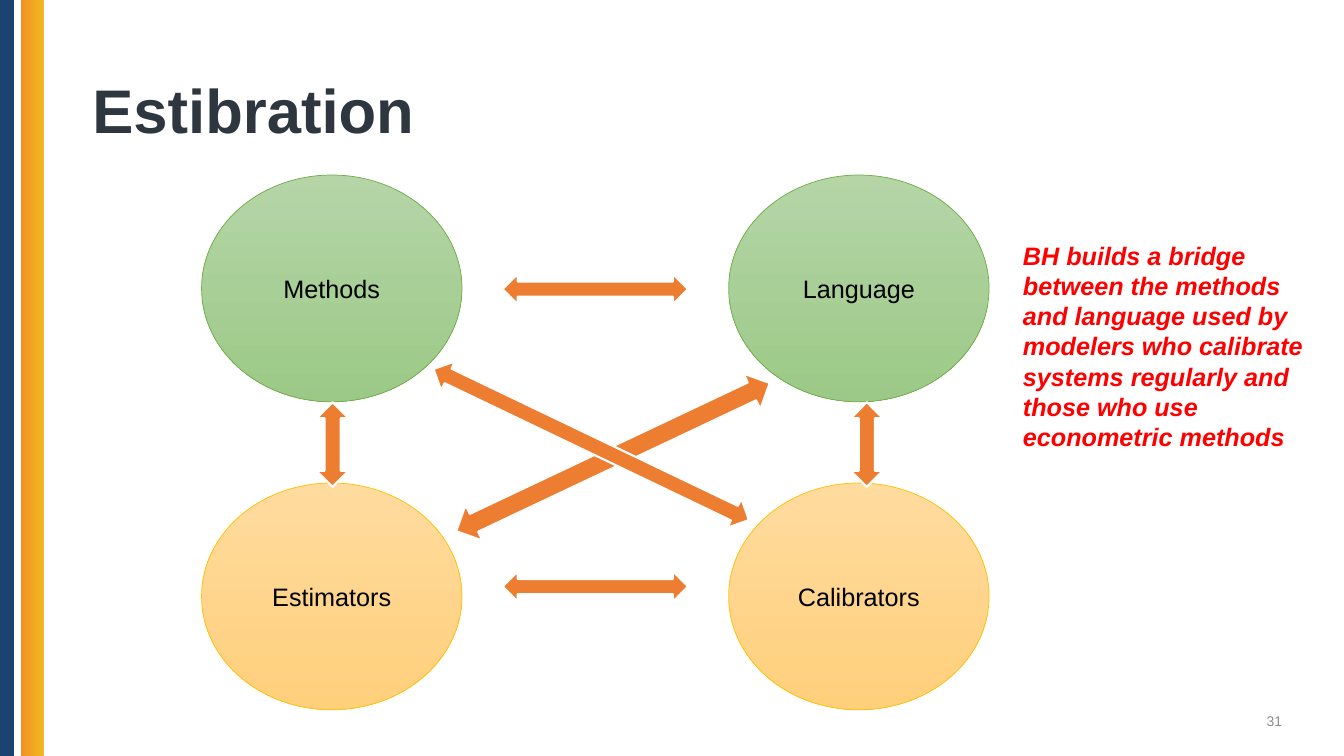
from pptx import Presentation
from pptx.dml.color import RGBColor
from pptx.enum.shapes import MSO_SHAPE
from pptx.enum.text import MSO_ANCHOR, PP_ALIGN
from pptx.util import Pt

HUES = {
    "navy": "1B4273", "amber": "F38F22", "gold": "F1BA20",
    "ink": "2E3640", "gray": "8C8C8C", "black": "000000", "red": "FF0000",
    "leaf": "B5D5A7", "moss": "9CC987", "green": "70AD47",
    "cream": "FFDB9E", "peach": "FFD07C", "sun": "FFC000",
    "orange": "ED7D31", "white": "FFFFFF",
}
TITLE = "Estibration"
PAGE = "31"
NOTE = ["BH builds a bridge",
        "between the methods and language used by modelers who calibrate "
        "systems regularly and those who use econometric methods"]
# Each row: labels, gradient top, gradient bottom, outline
ROWS = [
    (["Methods", "Language"], "leaf", "moss", "green"),
    (["Estimators", "Calibrators"], "cream", "peach", "sun"),
]
# Ellipse grid
LEFT, TOP, WIDE, HIGH = 144, 125, 186, 162
STEP_X, STEP_Y = 376.5, 220
MID_X = LEFT + (STEP_X + WIDE) / 2
MID_Y = TOP + (STEP_Y + HIGH) / 2 + 1.5
# Arrows: centre x, centre y, length, thickness, turn
ARROWS = [
    (MID_X, 206.5, 132.5, 21.6, 0),
    (MID_X, 419, 132.5, 21.6, 0),
    (437.8, 326.5, 247.7, 28.1, 154.7),
    (422.3, MID_Y, 249.8, 23, 205.6),
    (LEFT + WIDE / 2 + 0.6, MID_Y, 60.5, 23, 270),
    (619.2, MID_Y, 60.5, 23, 270),
]

deck = Presentation()
deck.slide_width, deck.slide_height = Pt(960), Pt(540)
slide = deck.slides.add_slide(deck.slide_layouts[6])


def hue(name):
    return RGBColor.from_string(HUES[name])


def shape(kind, x, y, w, h, fill, line=None, weight=0):
    item = slide.shapes.add_shape(kind, Pt(x), Pt(y), Pt(w), Pt(h))
    item.shadow.inherit = False
    if isinstance(fill, str):
        item.fill.solid()
        item.fill.fore_color.rgb = hue(fill)
    else:
        *names, angle = fill
        item.fill.gradient()
        item.fill.gradient_angle = angle
        for stop, name in zip(item.fill.gradient_stops, names):
            stop.color.rgb = hue(name)
        for stop, place in zip(item.fill.gradient_stops, (0, 1)):
            stop.position = place
    if line:
        item.line.color.rgb = hue(line)
        item.line.width = Pt(weight)
    else:
        item.line.fill.background()
    return item


def write(item, lines, size, color, align=PP_ALIGN.LEFT,
          anchor=MSO_ANCHOR.MIDDLE, bold=False, italic=False, space=None):
    frame = item.text_frame
    frame.word_wrap = True
    frame.vertical_anchor = anchor
    for i, line in enumerate(lines):
        para = frame.add_paragraph() if i else frame.paragraphs[0]
        para.alignment = align
        para.line_spacing = space
        run = para.add_run()
        run.text = line
        font = run.font
        font.name, font.size = "Arial", Pt(size)
        font.bold, font.italic = bold, italic
        font.color.rgb = hue(color)


def box(x, y, w, h):
    return slide.shapes.add_textbox(Pt(x), Pt(y), Pt(w), Pt(h))


# Side bands
shape(MSO_SHAPE.RECTANGLE, 0, 0, 10, 540, "navy")
shape(MSO_SHAPE.RECTANGLE, 15, 0, 16.5, 540, ("amber", "gold", 0))

# Title and page number
write(box(59, 28.8, 864, 104.4), [TITLE], 44, "ink", bold=True, space=0.9)
write(box(707, 500.4, 216, 28.8), [PAGE], 10, "gray", PP_ALIGN.RIGHT)

# Ellipses
for r, (names, top, low, edge) in enumerate(ROWS):
    for c, name in enumerate(names):
        oval = shape(MSO_SHAPE.OVAL, LEFT + c * STEP_X, TOP + r * STEP_Y,
                     WIDE, HIGH, (top, low, 270), edge, 0.5)
        write(oval, [name], 18, "black", PP_ALIGN.CENTER)

# Double arrows
for x, y, size, thick, turn in ARROWS:
    arrow = shape(MSO_SHAPE.LEFT_RIGHT_ARROW, x - size / 2, y - thick / 2,
                  size, thick, "orange", "white", 1.5)
    arrow.rotation = turn

# Side note
write(box(723.6, 167.8, 229.7, 203.8), NOTE, 18, "red",
      anchor=MSO_ANCHOR.TOP, bold=True, italic=True)

deck.save("out.pptx")
